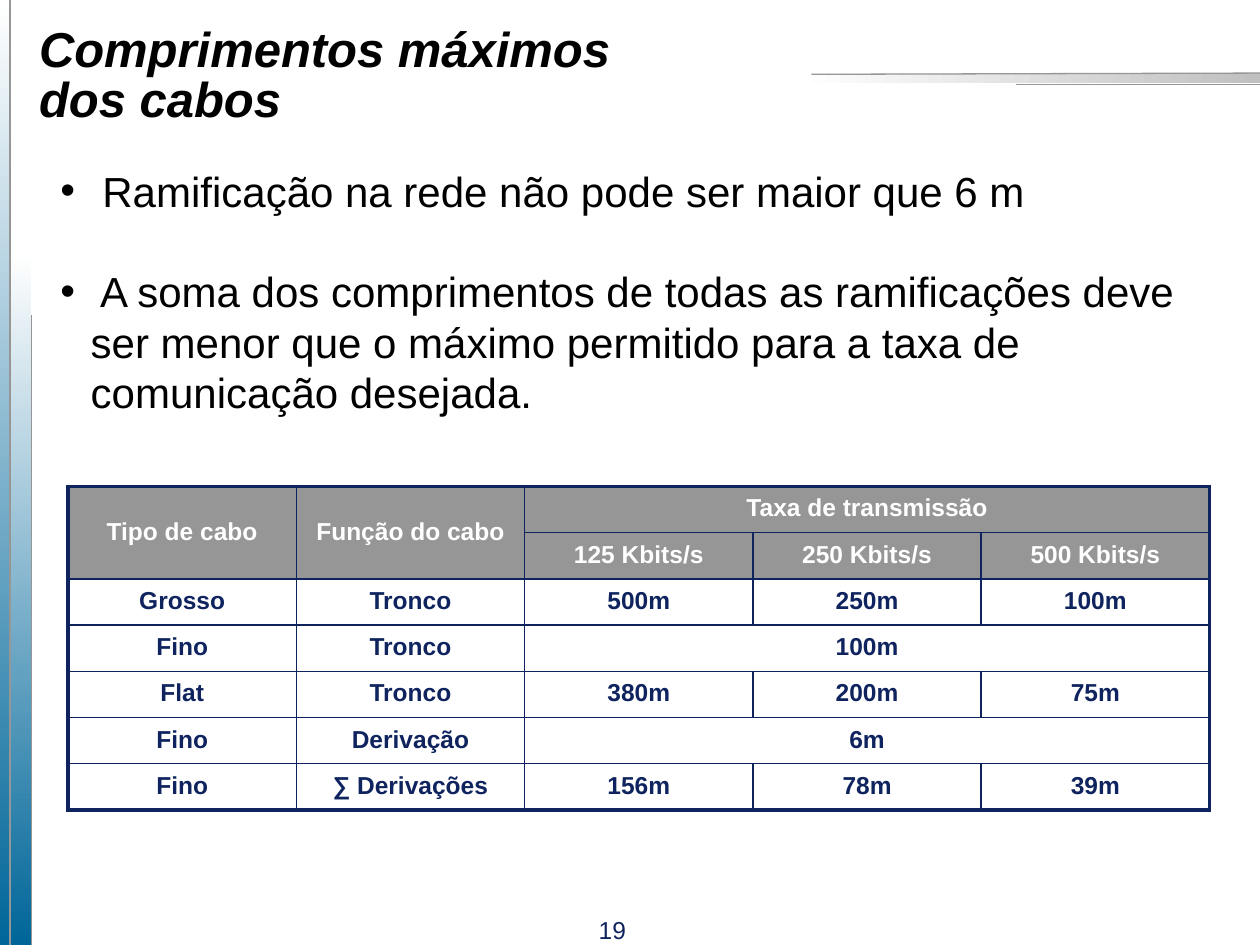
from dataclasses import dataclass

from lxml.etree import SubElement
from pptx import Presentation
from pptx.dml.color import RGBColor
from pptx.enum.shapes import MSO_CONNECTOR, MSO_SHAPE
from pptx.enum.text import MSO_ANCHOR, MSO_AUTO_SIZE, PP_ALIGN
from pptx.oxml.ns import qn
from pptx.util import Inches, Pt


@dataclass(frozen=True)
class Theme:
    font: str = "Arial"
    black: str = "000000"
    white: str = "FFFFFF"
    navy: str = "0F245F"
    blue: str = "006699"
    silver: str = "C0C0C0"
    gray: str = "969696"
    title_size: int = 28
    body_size: int = 24
    small_size: int = 14
    body_line: float = 28.8
    thin: float = 1
    thick: float = 2.25


THEME = Theme()

BULLETS = [
    " Ramificação na rede não pode ser maior que 6 m",
    " A soma dos comprimentos de todas as ramificações deve ser menor que o máximo "
    "permitido para a taxa de comunicação desejada.",
]
HEADER_ROWS = 2
CABLE_ROWS = [
    ["Tipo de cabo", "Função do cabo", "Taxa de transmissão", None, None],
    [None, None, "125 Kbits/s", "250 Kbits/s", "500 Kbits/s"],
    ["Grosso", "Tronco", "500m", "250m", "100m"],
    ["Fino", "Tronco", "100m", None, None],
    ["Flat", "Tronco", "380m", "200m", "75m"],
    ["Fino", "Derivação", "6m", None, None],
    ["Fino", "∑ Derivações", "156m", "78m", "39m"],
]
# First row, first column, last row, last column
MERGES = [(0, 0, 1, 0), (0, 1, 1, 1), (0, 2, 0, 4), (3, 2, 3, 4), (5, 2, 5, 4)]


def color(value):
    return RGBColor.from_string(value)


def style_text(para, size, value, bold=False, italic=False):
    for span in para.runs:
        span.font.name = THEME.font
        span.font.size = Pt(size)
        span.font.color.rgb = color(value)
        span.font.bold = bold
        span.font.italic = italic


def place(shape, left, top, width, height):
    shape.left, shape.top = Inches(left), Inches(top)
    shape.width, shape.height = Inches(width), Inches(height)


def add_gradient_bar(slide, left, top, width, height, end_color, angle):
    """Add a bar that fades from white to end_color."""
    bar = slide.shapes.add_shape(
        MSO_SHAPE.RECTANGLE, Inches(left), Inches(top), Inches(width), Inches(height))
    bar.shadow.inherit = False
    bar.line.fill.background()
    bar.fill.gradient()
    bar.fill.gradient_angle = angle
    for stop, value in zip(bar.fill.gradient_stops, (THEME.white, end_color)):
        stop.color.rgb = color(value)
    first, last = bar.fill.gradient_stops
    first.position, last.position = 0, 1


def add_rule(slide, x1, y1, x2, y2):
    rule = slide.shapes.add_connector(
        MSO_CONNECTOR.STRAIGHT, Inches(x1), Inches(y1), Inches(x2), Inches(y2))
    rule.line.color.rgb = color(THEME.gray)
    rule.line.width = Pt(0.75)
    SubElement(rule._element.spPr, qn("a:effectLst"))


def add_decoration(slide):
    add_gradient_bar(slide, 0, 0, 0.08, 7.5, THEME.blue, 270)
    add_rule(slide, 0.25, 2.5, 0.25, 7.5)
    add_gradient_bar(slide, 6.33, 0.58, 3.67, 0.08, THEME.silver, 0)
    add_rule(slide, 10, 0.67, 8.06, 0.67)
    add_rule(slide, 10, 0.58, 6.44, 0.59)
    add_gradient_bar(slide, 0.08, 2, 0.17, 5.5, THEME.blue, 270)
    add_rule(slide, 0.08, 0, 0.08, 7.5)


def fill_title(title, text):
    place(title, 0.21, 0.11, 8.07, 0.95)
    frame = title.text_frame
    frame.text = text
    frame.auto_size = MSO_AUTO_SIZE.NONE
    frame.vertical_anchor = MSO_ANCHOR.BOTTOM
    para = frame.paragraphs[0]
    para.alignment = PP_ALIGN.LEFT
    para.line_spacing = 0.85
    style_text(para, THEME.title_size, THEME.black, bold=True, italic=True)


def fill_bullets(body, items):
    place(body, 0.38, 1.26, 9.37, 2.1)
    frame = body.text_frame
    frame.text = "\n".join(items)
    frame.auto_size = MSO_AUTO_SIZE.NONE
    for index, para in enumerate(frame.paragraphs):
        properties = para._p.get_or_add_pPr()
        properties.set("marL", str(Inches(0.24)))
        properties.set("indent", str(-Inches(0.24)))
        SubElement(properties, qn("a:buChar"), char="•")
        para.line_spacing = Pt(THEME.body_line)
        para.space_before = Pt(THEME.body_line if index else 0)
        style_text(para, THEME.body_size, THEME.black)


def set_borders(cell, widths):
    """Draw the left, right, top and bottom edges, in that order."""
    properties = cell._tc.get_or_add_tcPr()
    for side, width in zip("LRTB", widths):
        edge = SubElement(properties, qn(f"a:ln{side}"), w=str(Pt(width)))
        fill = SubElement(edge, qn("a:solidFill"))
        SubElement(fill, qn("a:srgbClr"), val=THEME.navy)


def format_cell(cell, text, is_header):
    cell.vertical_anchor = MSO_ANCHOR.MIDDLE
    if is_header:
        cell.fill.solid()
        cell.fill.fore_color.rgb = color(THEME.gray)
    else:
        cell.fill.background()
    if text:
        para = cell.text_frame.paragraphs[0]
        para.text = text
        para.alignment = PP_ALIGN.CENTER
        para.line_spacing = 0.9
        style_text(para, THEME.small_size, THEME.white if is_header else THEME.navy, bold=True)


def add_cable_table(slide):
    row_count, column_count = len(CABLE_ROWS), len(CABLE_ROWS[0])
    table = slide.shapes.add_table(
        row_count, column_count, Inches(0.54), Inches(3.86), Inches(9.06), Inches(2.57)).table
    table.first_row = table.horz_banding = False
    for first_row, first_column, last_row, last_column in MERGES:
        table.cell(first_row, first_column).merge(table.cell(last_row, last_column))
    for row, texts in enumerate(CABLE_ROWS):
        for column, text in enumerate(texts):
            cell = table.cell(row, column)
            right = column + cell.span_width
            bottom = row + cell.span_height
            outer = (column == 0, right == column_count, row == 0, bottom == row_count)
            set_borders(cell, [THEME.thick if edge else THEME.thin for edge in outer])
            format_cell(cell, text, row < HEADER_ROWS)


def add_page_number(slide, number):
    box = slide.shapes.add_textbox(Inches(4.54), Inches(7.21), Inches(0.64), Inches(0.33))
    box.text_frame.word_wrap = True
    para = box.text_frame.paragraphs[0]
    para.text = number
    para.alignment = PP_ALIGN.CENTER
    style_text(para, THEME.small_size, THEME.navy)


def main():
    deck = Presentation()
    deck.slide_width, deck.slide_height = Inches(10), Inches(7.5)
    slide = deck.slides.add_slide(deck.slide_layouts[1])
    add_decoration(slide)
    fill_title(slide.shapes.title, "Comprimentos máximos\vdos cabos")
    fill_bullets(slide.placeholders[1], BULLETS)
    add_cable_table(slide)
    add_page_number(slide, "19")
    deck.save("out.pptx")


if __name__ == "__main__":
    main()
